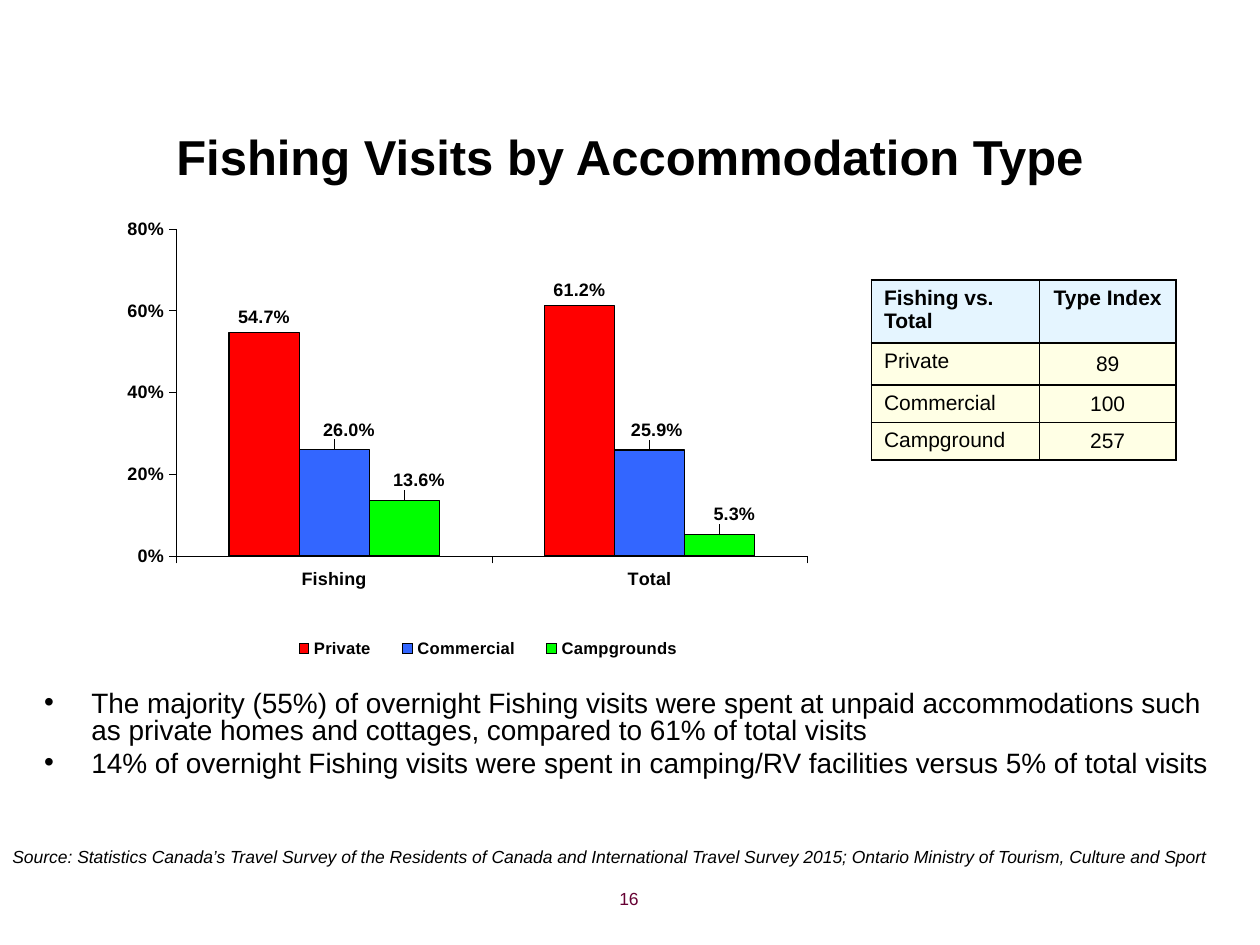
from lxml import etree
from pptx import Presentation
from pptx.chart.data import CategoryChartData
from pptx.dml.color import RGBColor
from pptx.enum.chart import XL_CHART_TYPE as Kind, XL_LABEL_POSITION as LabelPos
from pptx.enum.chart import XL_LEGEND_POSITION as KeyPos, XL_TICK_MARK as Tick
from pptx.enum.text import MSO_ANCHOR as Anchor, MSO_AUTO_SIZE as Fit, PP_ALIGN as Align
from pptx.oxml import parse_xml
from pptx.oxml.ns import nsdecls, qn
from pptx.util import Pt

BLACK = RGBColor(0, 0, 0)
RED = RGBColor(0xFF, 0, 0)
BLUE = RGBColor(0x33, 0x66, 0xFF)
GREEN = RGBColor(0, 0xFF, 0)
PLUM = RGBColor(0x66, 0, 0x33)
SKY = RGBColor(0xCC, 0xEC, 0xFF)
CREAM = RGBColor(0xFF, 0xFF, 0xCC)

BULLETS = [
    "The majority (55%) of overnight Fishing visits were spent at unpaid accommodations "
    "such as private homes and cottages, compared to 61% of total visits",
    "14% of overnight Fishing visits were spent in camping/RV facilities versus 5% of total visits",
]
SOURCE = ("Source: Statistics Canada’s Travel Survey of the Residents of Canada and International "
          "Travel Survey 2015; Ontario Ministry of Tourism, Culture and Sport")
ROWS = [("Fishing vs. Total", "Type Index"), ("Private", "89"),
        ("Commercial", "100"), ("Campground", "257")]
# Name, values, colour, and label shifts as shares of the chart size
SERIES = [
    ("Private", (0.547, 0.612), RED, ()),
    ("Commercial", (0.26, 0.259), BLUE, ((0.02, -0.01), (0.01, -0.01))),
    ("Campgrounds", (0.136, 0.053), GREEN, ((0.02, -0.01), (0.02, -0.01))),
]


def style(font, size, bold=False, color=BLACK):
    font.name = "Arial"
    font.size = Pt(size)
    font.bold = bold
    font.color.rgb = color


def place(shape, box):
    shape.left, shape.top, shape.width, shape.height = map(Pt, box)


def add_title(slide, box):
    title = slide.shapes.title
    place(title, box)
    frame = title.text_frame
    frame.text = "Fishing Visits by Accommodation Type"
    frame.auto_size = Fit.NONE
    frame.vertical_anchor = Anchor.MIDDLE
    para = frame.paragraphs[0]
    para.alignment = Align.CENTER
    style(para.font, 28, True)


def add_list(slide, box):
    body = slide.placeholders[1]
    place(body, box)
    frame = body.text_frame
    frame.text = "\n".join(BULLETS)
    frame.auto_size = Fit.NONE
    for i, para in enumerate(frame.paragraphs):
        props = para._p.get_or_add_pPr()
        props.set("marL", str(Pt(27)))
        props.set("indent", str(Pt(-27)))
        para.line_spacing = 0.8
        para.space_before = Pt(3.2 if i else 0)
        style(para.font, 16)


def add_note(slide, box, text, align, color=BLACK, italic=False):
    frame = slide.shapes.add_textbox(*map(Pt, box)).text_frame
    frame.word_wrap = True
    para = frame.paragraphs[0]
    para.text = text
    para.alignment = align
    style(para.font, 10, color=color)
    para.font.italic = italic


def fill_cell(cell, color):
    """Draw black borders, then a half-transparent fill."""
    props = cell._tc.get_or_add_tcPr()
    for side in ("lnL", "lnR", "lnT", "lnB"):
        props.append(parse_xml(
            f'<a:{side} {nsdecls("a")} w="{Pt(1)}"><a:solidFill>'
            f'<a:srgbClr val="{BLACK}"/></a:solidFill></a:{side}>'))
    cell.fill.solid()
    cell.fill.fore_color.rgb = color
    tone = props.find(qn("a:solidFill")).find(qn("a:srgbClr"))
    etree.SubElement(tone, qn("a:alpha")).set("val", "50000")


def add_index(slide, box):
    table = slide.shapes.add_table(len(ROWS), 2, *map(Pt, box)).table
    for col, width in zip(table.columns, (96, 78)):
        col.width = Pt(width)
    for row, height in zip(table.rows, (36, 24, 21.5, 21.5)):
        row.height = Pt(height)
    for r, texts in enumerate(ROWS):
        for c, text in enumerate(texts):
            cell = table.cell(r, c)
            fill_cell(cell, CREAM if r else SKY)
            if r and c:
                cell.vertical_anchor = Anchor.MIDDLE
                cell.margin_left = cell.margin_right = 0
                cell.margin_top = cell.margin_bottom = 0
            para = cell.text_frame.paragraphs[0]
            para.text = text
            para.alignment = Align.CENTER if c else Align.LEFT
            style(para.font, 12, r == 0)


def layout(target="", mode="", **sizes):
    """Make a manual chart layout from shares of the chart size."""
    parts = [f'<c:layoutTarget val="{target}"/>'] if target else []
    if mode:
        parts += [f'<c:{axis}Mode val="{mode}"/>' for axis in "xy"]
    parts += [f'<c:{key} val="{val}"/>' for key, val in sizes.items()]
    return parse_xml(f'<c:layout {nsdecls("c")}><c:manualLayout>{"".join(parts)}'
                     '</c:manualLayout></c:layout>')


def format_axis(axis):
    axis.has_major_gridlines = False
    axis.major_tick_mark = Tick.OUTSIDE
    axis.minor_tick_mark = Tick.NONE
    axis.format.line.color.rgb = BLACK
    axis.format.line.width = Pt(0.18)
    style(axis.tick_labels.font, 10.3, True)


def format_series(series, color, shifts):
    series.format.fill.solid()
    series.format.fill.fore_color.rgb = color
    series.format.line.color.rgb = BLACK
    series.format.line.width = Pt(0.75)
    series.invert_if_negative = False
    labels = series.data_labels
    labels.show_value = True
    labels.number_format = "0.0%"
    labels.number_format_is_linked = False
    labels.position = LabelPos.OUTSIDE_END
    style(labels.font, 10.3, True)
    for i in range(len(shifts)):
        label = series.points[i].data_label
        label.position = LabelPos.OUTSIDE_END
        style(label.font, 10.3, True)
    for node, (x, y) in zip(series._element.iter(qn("c:dLbl")), shifts):
        node.insert(1, layout(x=x, y=y))
        node.insert(2, parse_xml(
            f'<c:numFmt {nsdecls("c")} formatCode="0.0%" sourceLinked="0"/>'))


def add_bars(slide, box):
    data = CategoryChartData(number_format="0.0%")
    data.categories = ["Fishing", "Total"]
    for name, values, *_ in SERIES:
        data.add_series(name, values)
    chart = slide.shapes.add_chart(Kind.COLUMN_CLUSTERED, *map(Pt, box), data).chart
    chart.has_title = False
    style(chart.font, 15.8, True)
    plot = chart.plots[0]
    plot.gap_width = 150
    plot.overlap = 0
    plot.vary_by_categories = False
    for series, (*_, color, shifts) in zip(plot.series, SERIES):
        format_series(series, color, shifts)
    format_axis(chart.category_axis)
    scale = chart.value_axis
    format_axis(scale)
    scale.minimum_scale, scale.maximum_scale, scale.major_unit = 0, 0.8, 0.2
    scale.tick_labels.number_format = "0%"
    scale.tick_labels.number_format_is_linked = False
    chart.has_legend = True
    key = chart.legend
    key.position = KeyPos.BOTTOM
    key.include_in_layout = False
    style(key.font, 9.5, True)
    key._element.find(qn("c:legendPos")).addnext(
        layout(mode="edge", x=0.23, y=0.92, w=0.58, h=0.05))
    area = chart._chartSpace.chart.plotArea
    for old in area.findall(qn("c:layout")):
        area.remove(old)
    area.insert(0, layout("inner", "edge", x=0.1, y=0.06, w=0.85, h=0.69))


def main():
    deck = Presentation()
    deck.slide_width, deck.slide_height = Pt(720), Pt(540)
    slide = deck.slides.add_slide(deck.slide_layouts[1])
    add_title(slide, (36, 62, 648, 54))
    add_list(slide, (18, 392, 696, 109))
    add_index(slide, (498, 160, 174, 103))
    add_note(slide, (204, 504, 168, 25), "16", Align.RIGHT, PLUM)
    add_bars(slide, (58.5, 114.5, 424, 271))
    add_note(slide, (0, 480, 706, 19.5), SOURCE, Align.LEFT, italic=True)
    deck.save("out.pptx")


if __name__ == "__main__":
    main()
